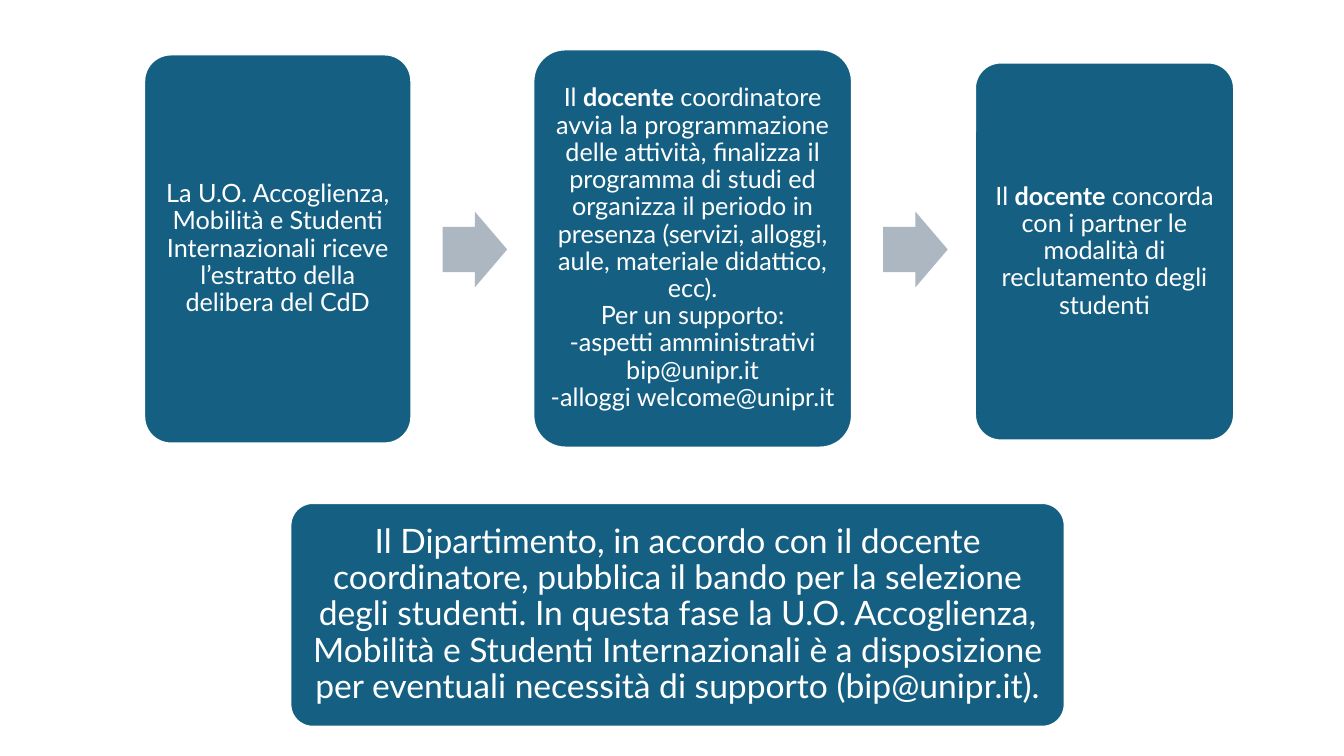
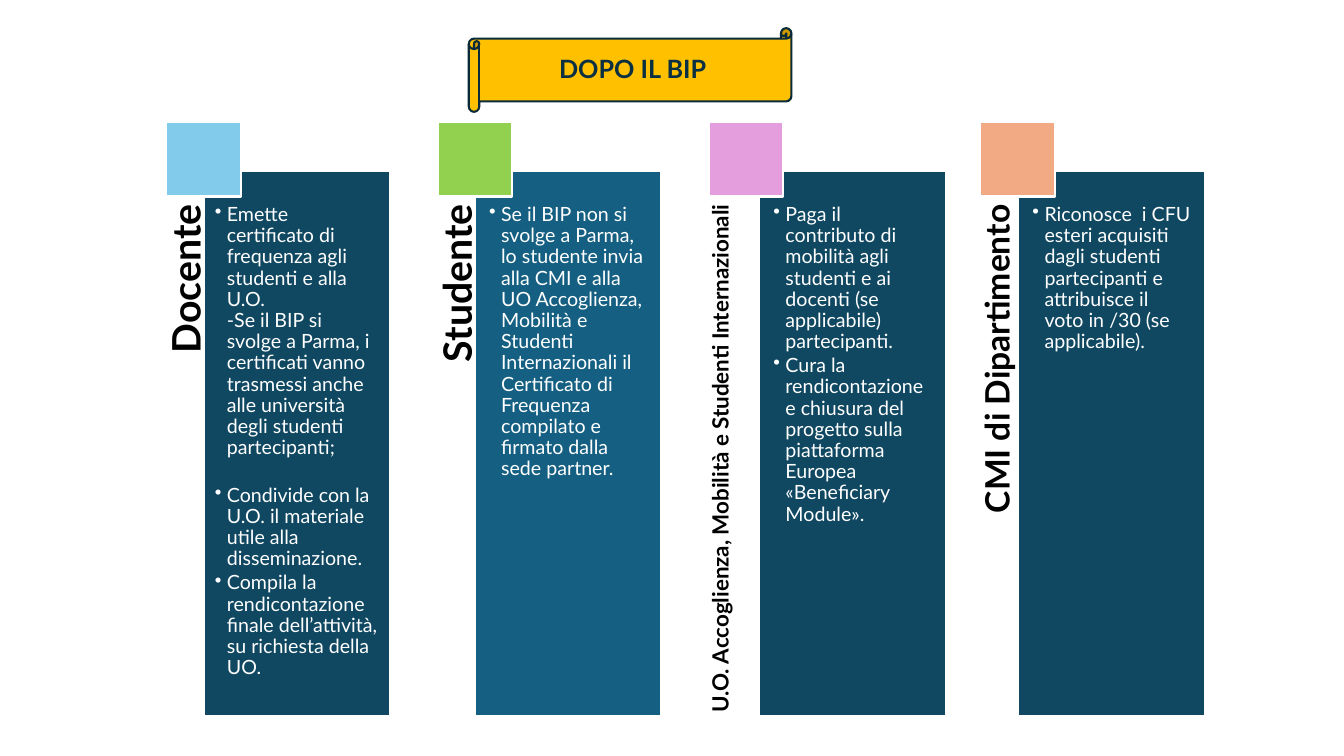
"""Build two slides on the BIP procedure: the steps before it and the tasks after it."""
import pptx
import pptx.dml.color
import pptx.enum.shapes
import pptx.enum.text
import pptx.oxml.ns
import pptx.util
from lxml import etree

Inches = pptx.util.Inches
Pt = pptx.util.Pt
Shape = pptx.enum.shapes.MSO_SHAPE
Align = pptx.enum.text.PP_ALIGN
Anchor = pptx.enum.text.MSO_ANCHOR
color = pptx.dml.color.RGBColor.from_string

FONT = "Lato"
WHITE, BLACK = "FFFFFF", "000000"
BLUE, DARK_BLUE = "156082", "104862"
ARROW_GREY = "ACB7C1"
BANNER_FILL, BANNER_LINE, BANNER_TEXT = "FFC000", "092A39", "0B3041"


def add_block(page, kind, place, fill, line=None):
    """Add a filled shape with an optional outline."""
    block = page.shapes.add_shape(kind, *map(Inches, place))
    block.shadow.inherit = False
    block.fill.solid()
    block.fill.fore_color.rgb = color(fill)
    if line:
        block.line.color.rgb = color(line)
        block.line.width = Pt(1.5)
    else:
        block.line.fill.background()
    return block


def write(box, paras, size, ink, align, anchor, insets, after=0, bullets=False):
    """Write paragraphs, each a list of (text, bold) runs, into a shape."""
    frame = box.text_frame
    frame.word_wrap = True
    frame.auto_size = pptx.enum.text.MSO_AUTO_SIZE.NONE
    frame.vertical_anchor = anchor
    frame.margin_left, frame.margin_top, frame.margin_right, frame.margin_bottom = map(Inches, insets)
    for index, spans in enumerate(paras):
        para = frame.paragraphs[0] if index == 0 else frame.add_paragraph()
        if bullets:
            props = para._p.get_or_add_pPr()
            props.set("marL", str(Inches(0.12)))
            props.set("indent", str(-Inches(0.12)))
            etree.SubElement(props, pptx.oxml.ns.qn("a:buChar"), char="•")
        para.alignment = align
        para.line_spacing = 0.9
        para.space_after = Pt(after)
        for text, bold in spans:
            for number, part in enumerate(text.split("\n")):
                if number:
                    para.add_line_break()
                span = para.add_run()
                span.text = part
                span.font.name = FONT
                span.font.size = Pt(size)
                span.font.bold = bold
                span.font.color.rgb = color(ink)


deck = pptx.Presentation()
deck.slide_width = Inches(13.33)
deck.slide_height = Inches(7.5)
TITLE_ONLY, BLANK = deck.slide_layouts[5], deck.slide_layouts[6]

page = deck.slides.add_slide(BLANK)
steps = [
    ((1.43, 0.54, 2.65, 3.86), 18, 0.07, [
        ("La U.O. Accoglienza, Mobilità e Studenti Internazionali riceve l’estratto della delibera del CdD", False)]),
    ((5.29, 0.49, 3.16, 3.95), 18, 0.07, [
        ("Il ", False), ("docente", True),
        (" coordinatore avvia la programmazione delle attività, finalizza il programma di studi ed organizza "
         "il periodo in presenza (servizi, alloggi, aule, materiale didattico, ecc).\n"
         "Per un supporto:\n-aspetti amministrativi bip@unipr.it\n-alloggi welcome@unipr.it", False)]),
    ((9.67, 0.62, 2.57, 3.75), 18, 0.07, [
        ("Il ", False), ("docente", True),
        (" concorda con i partner le modalità di reclutamento degli studenti", False)]),
    ((2.88, 4.99, 7.68, 2.22), 24, 0.1, [
        ("Il Dipartimento, in accordo con il docente coordinatore, pubblica il bando per la selezione degli "
         "studenti. In questa fase la U.O. Accoglienza, Mobilità e Studenti Internazionali è a disposizione "
         "per eventuali necessità di supporto (bip@unipr.it).", False)]),
]
for place, size, inset, spans in steps:
    step = add_block(page, Shape.ROUNDED_RECTANGLE, place, BLUE, WHITE)
    step.adjustments[0] = 0.1
    write(step, [spans], size, WHITE, Align.CENTER, Anchor.MIDDLE, [inset] * 4)

for (left, top, width, height), *rest in steps[:2]:
    arrow = add_block(page, Shape.RIGHT_ARROW, (left + width + 0.31, 2.1, 0.64, 0.75), ARROW_GREY)
    arrow.adjustments[0] = 0.6
    arrow.adjustments[1] = 0.5

page = deck.slides.add_slide(TITLE_ONLY)
banner = add_block(page, Shape.HORIZONTAL_SCROLL, (4.65, 0.28, 3.2, 0.83), BANNER_FILL, BANNER_LINE)
title = page.shapes.title
title.left, title.top, title.width, title.height = map(Inches, (4.75, 0.28, 3.05, 0.83))
write(title, [[("DOPO IL BIP", True)]], 18, BANNER_TEXT, Align.CENTER, Anchor.MIDDLE, [0.05] * 4)
banner.element.addnext(title.element)

PANEL_TOP, PANEL_WIDTH, PANEL_HEIGHT = 1.7, 1.85, 5.4
LABEL_HEIGHT, SQUARE = 0.37, 0.74
roles = [
    ("Docente", 28, 2.02, DARK_BLUE, "83CBEB", 0.11, 2, [
        "Emette certificato di frequenza agli studenti e alla U.O.\n"
        "-Se il BIP si svolge a Parma, i certificati vanno trasmessi anche alle università degli studenti "
        "partecipanti;",
        "Condivide con la U.O. il materiale utile alla disseminazione.",
        "Compila la rendicontazione finale dell’attività, su richiesta della UO."]),
    ("Studente", 28, 4.71, BLUE, "92D050", 0.14, 2, [
        "Se il BIP non si svolge a Parma, lo studente invia alla CMI e alla UO Accoglienza, Mobilità e "
        "Studenti Internazionali il Certificato di Frequenza compilato e firmato dalla sede partner."]),
    ("U.O. Accoglienza, Mobilità e Studenti Internazionali", 16, 7.53, DARK_BLUE, "E59EDD", 0.14, 2, [
        "Paga il contributo di mobilità agli studenti e ai docenti (se applicabile) partecipanti.",
        "Cura la rendicontazione e chiusura del progetto sulla piattaforma Europea «Beneficiary Module»."]),
    ("CMI di Dipartimento", 24, 10.1, DARK_BLUE, "F2AA84", 0.14, 2, [
        "Riconosce  i CFU esteri acquisiti dagli studenti partecipanti e attribuisce il voto in /30 "
        "(se applicabile)."]),
]
for column, (role, size, panel_left, panel_fill, square_fill, inset, after, tasks) in enumerate(roles):
    square_left = 1.65 + 2.69 * column
    label_left = square_left + 0.19 - PANEL_HEIGHT / 2
    label_top = PANEL_TOP + (PANEL_HEIGHT - LABEL_HEIGHT) / 2
    label = page.shapes.add_textbox(*map(Inches, (label_left, label_top, PANEL_HEIGHT, LABEL_HEIGHT)))
    label.rotation = 270
    write(label, [[(role, True)]], size, BLACK, Align.RIGHT, Anchor.TOP, (0, 0, 0.33, 0))

    panel = add_block(page, Shape.RECTANGLE, (panel_left, PANEL_TOP, PANEL_WIDTH, PANEL_HEIGHT), panel_fill, WHITE)
    write(panel, [[(task, False)] for task in tasks], 14, WHITE, Align.LEFT, Anchor.TOP,
          (inset, 0.33, inset, inset), after, bullets=True)
    if role == "Docente":
        panel.text_frame.paragraphs[0].space_after = Pt(19)
    add_block(page, Shape.RECTANGLE, (square_left, 1.21, SQUARE, SQUARE), square_fill, WHITE)

deck.save("out.pptx")
